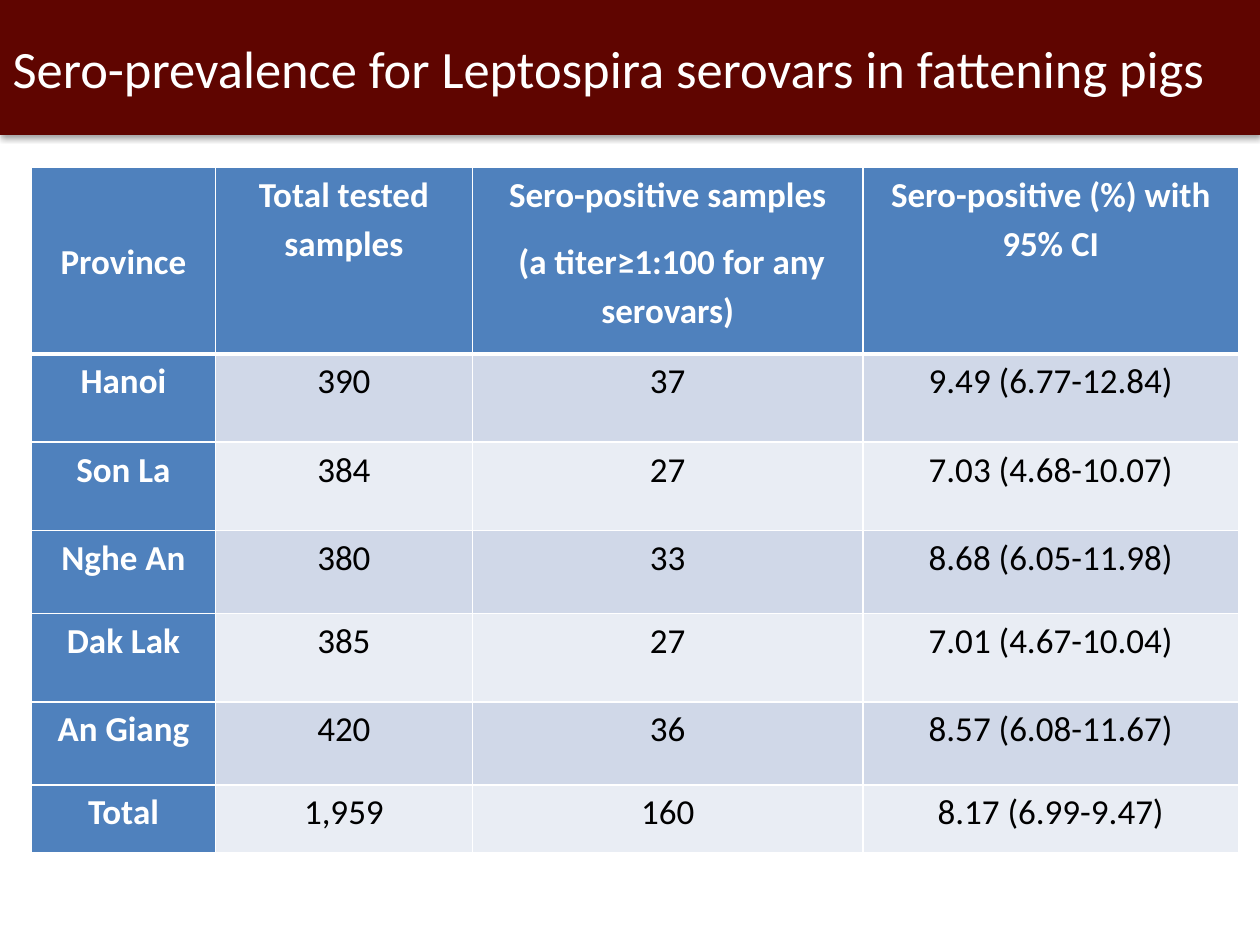
from lxml.etree import SubElement
from pptx import Presentation
from pptx.dml.color import RGBColor
from pptx.enum.text import MSO_ANCHOR, MSO_AUTO_SIZE, PP_ALIGN
from pptx.oxml import parse_xml
from pptx.oxml.ns import nsdecls, qn
from pptx.util import Inches, Pt

COLORS = {"bar": "5F0500", "head": "4F81BD", "odd": "D0D8E8", "even": "E9EDF4",
          "white": "FFFFFF", "black": "000000"}
COLS = [1.46, 2.04, 3.1, 2.98]
HEIGHTS = [1.48, 0.7, 0.7, 0.66, 0.7, 0.66, 0.54]
ROWS = [
    ["Province", "Total tested samples",
     "Sero-positive samples\n (a titer≥1:100 for any serovars)", "Sero-positive (%) with 95% CI"],
    ["Hanoi", "390", "37", "9.49 (6.77-12.84)"],
    ["Son La", "384", "27", "7.03 (4.68-10.07)"],
    ["Nghe An", "380", "33", "8.68 (6.05-11.98)"],
    ["Dak Lak", "385", "27", "7.01 (4.67-10.04)"],
    ["An Giang", "420", "36", "8.57 (6.08-11.67)"],
    ["Total", "1,959", "160", "8.17 (6.99-9.47)"],
]


def add_run(p, text, size, color, bold=False):
    r = p.add_run()
    r.text = text
    r.font.name = "Calibri"
    r.font.size = Pt(size)
    r.font.bold = bold
    r.font.color.rgb = RGBColor.from_string(COLORS[color])


def add_border(cell, side, width):
    ln = SubElement(cell._tc.get_or_add_tcPr(), qn(f"a:ln{side}"), w=str(Pt(width)))
    fill = SubElement(ln, qn("a:solidFill"))
    SubElement(fill, qn("a:srgbClr"), val=COLORS["white"])


prs = Presentation()
prs.slide_width, prs.slide_height = Inches(10), Inches(7.5)
s = prs.slides.add_slide(prs.slide_layouts[5])

title = s.shapes.title
title.left, title.top = Inches(0), Inches(0)
title.width, title.height = Inches(10), Inches(1.07)
title.fill.solid()
title.fill.fore_color.rgb = RGBColor.from_string(COLORS["bar"])
title._element.spPr.append(parse_xml(
    f'<a:effectLst {nsdecls("a")}><a:outerShdw blurRad="{Pt(3.1)}" dist="{Pt(1.8)}" dir="5400000" '
    f'rotWithShape="0"><a:srgbClr val="{COLORS["black"]}"><a:alpha val="35000"/></a:srgbClr>'
    '</a:outerShdw></a:effectLst>'))
tf = title.text_frame
tf.auto_size = MSO_AUTO_SIZE.NONE
tf.vertical_anchor = MSO_ANCHOR.MIDDLE
p = tf.paragraphs[0]
p.alignment = PP_ALIGN.LEFT
add_run(p, "Sero-prevalence for Leptospira serovars in fattening pigs", 30, "white")

table = s.shapes.add_table(len(ROWS), len(COLS), Inches(0.25), Inches(1.33),
                           Inches(sum(COLS)), Inches(sum(HEIGHTS))).table
for col, width in zip(table.columns, COLS):
    col.width = Inches(width)
for row, height in zip(table.rows, HEIGHTS):
    row.height = Inches(height)

for i, row in enumerate(ROWS):
    for j, text in enumerate(row):
        cell = table.cell(i, j)
        heading = i == 0 or j == 0
        cell.margin_left = cell.margin_right = Inches(0.07)
        cell.margin_top = Inches(0.53 if i == j == 0 else 0)
        cell.margin_bottom = Inches(0)
        for side, width in (("L", 1), ("R", 1), ("T", 3 if i == 1 else 1), ("B", 3 if i == 0 else 1)):
            add_border(cell, side, width)
        cell.fill.solid()
        fill = "head" if heading else "odd" if i % 2 else "even"
        cell.fill.fore_color.rgb = RGBColor.from_string(COLORS[fill])
        tf = cell.text_frame
        for k, line in enumerate(text.split("\n")):
            p = tf.add_paragraph() if k else tf.paragraphs[0]
            p.alignment = PP_ALIGN.CENTER
            p.line_spacing = 1.15
            p.space_after = Pt(10)
            add_run(p, line, 20, "white" if heading else "black", heading)

prs.save("out.pptx")
